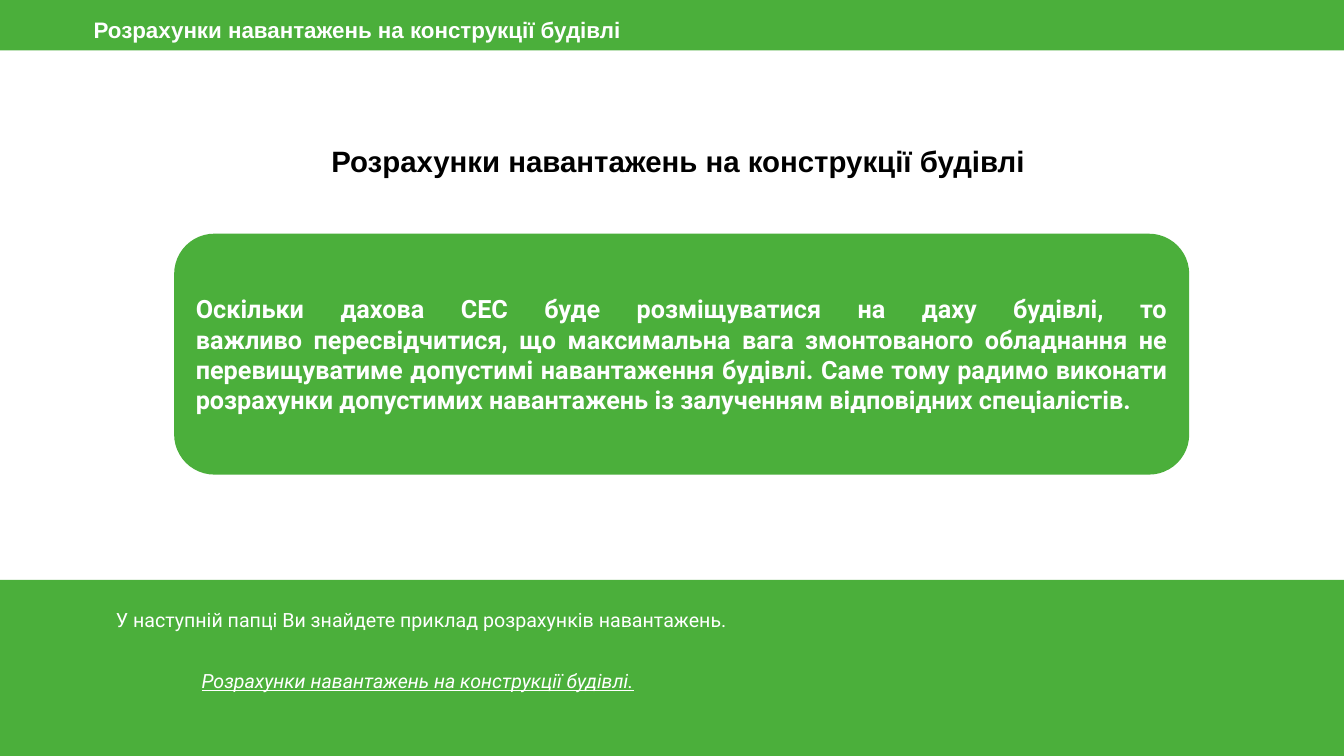
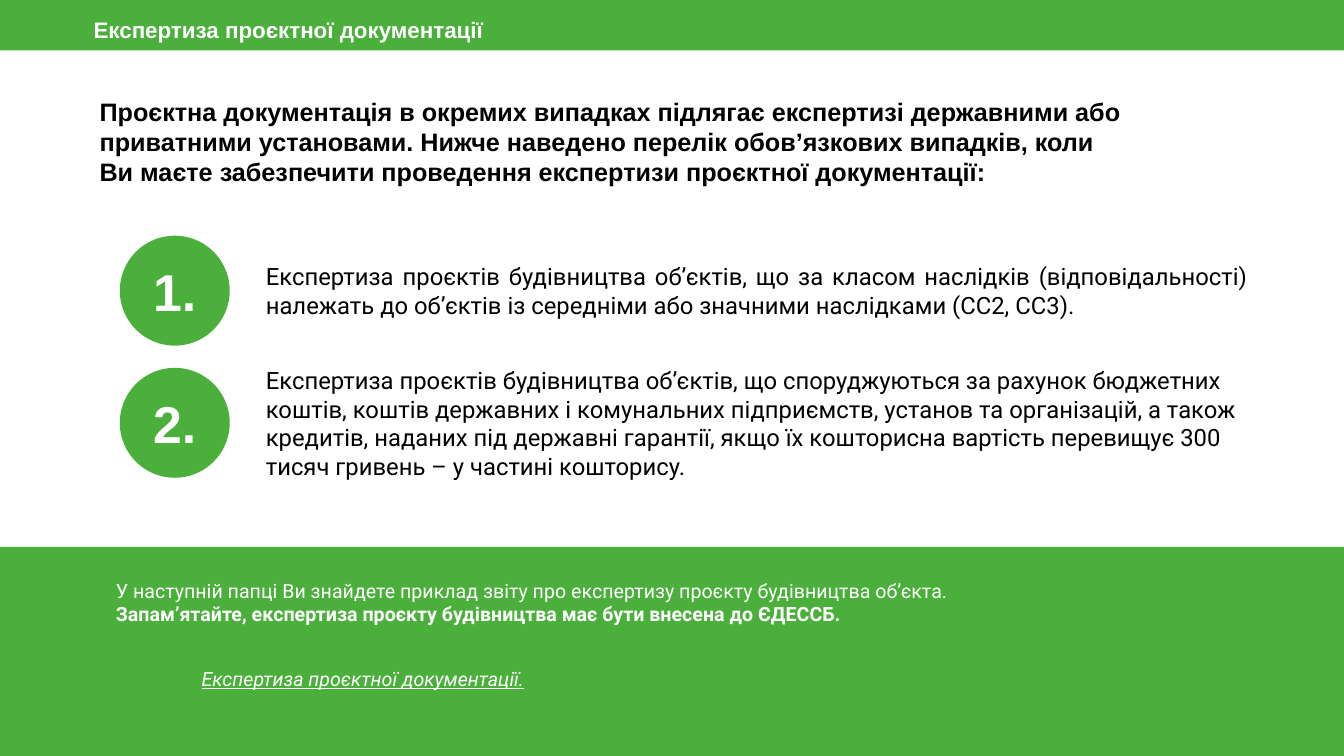
from dataclasses import dataclass, replace

from pptx import Presentation
from pptx.dml.color import RGBColor
from pptx.enum.shapes import MSO_SHAPE
from pptx.enum.text import MSO_ANCHOR, PP_ALIGN
from pptx.util import Cm, Pt


@dataclass(frozen=True)
class TextStyle:
    size: float
    font: str
    color: RGBColor
    bold: bool = False
    italic: bool = False
    underline: bool = False
    line_spacing: float = 1.0


class Theme:
    green = RGBColor(0x4B, 0xAF, 0x3B)
    white = RGBColor(0xFF, 0xFF, 0xFF)
    black = RGBColor(0x00, 0x00, 0x00)

    header = TextStyle(16, "Arial", white, bold=True)
    title = TextStyle(21, "Arial", black, bold=True, line_spacing=0.99)
    lead = replace(title, size=18)
    number = TextStyle(37, "Arial", white, bold=True)
    card = TextStyle(18, "Roboto", white, bold=True)
    item = TextStyle(17, "Roboto", black)
    note = TextStyle(14, "Roboto", white)
    note_strong = replace(note, bold=True)
    link = replace(note, italic=True, underline=True)


SLIDE_WIDTH, SLIDE_HEIGHT = Cm(33.87), Cm(19.05)
INSET = Cm(0.25)
NOTE_LEFT, LINK_LEFT = Cm(2.67), Cm(4.83)
NOTE_WIDTH, NOTE_HEIGHT = Cm(29.03), Cm(1.9)
CIRCLE_LEFT, CIRCLE_SIZE = Cm(3.02), Cm(2.77)
ITEM_LEFT, ITEM_WIDTH = Cm(6.45), Cm(25.25)
ITEMS_TOP, ITEM_PITCH = Cm(5.94), Cm(3.33)


def write_text(shape, lines, anchor=MSO_ANCHOR.TOP, align=PP_ALIGN.LEFT):
    """Fill the shape with one paragraph for each (text, style) pair."""
    frame = shape.text_frame
    frame.word_wrap = True
    frame.vertical_anchor = anchor
    frame.margin_left = frame.margin_right = INSET
    frame.margin_top = frame.margin_bottom = INSET
    for index, (text, style) in enumerate(lines):
        paragraph = frame.add_paragraph() if index else frame.paragraphs[0]
        paragraph.text = text
        paragraph.alignment = align
        paragraph.line_spacing = style.line_spacing
        font = paragraph.font
        font.size = Pt(style.size)
        font.name = style.font
        font.color.rgb = style.color
        font.bold = style.bold
        font.italic = style.italic
        font.underline = style.underline


def add_text(slide, box, lines, anchor=MSO_ANCHOR.TOP, align=PP_ALIGN.LEFT):
    write_text(slide.shapes.add_textbox(*box), lines, anchor, align)


def add_green_shape(slide, kind, box):
    shape = slide.shapes.add_shape(kind, *box)
    shape.shadow.inherit = False
    shape.fill.solid()
    shape.fill.fore_color.rgb = Theme.green
    shape.line.fill.background()
    return shape


def add_header(slide, text):
    add_green_shape(slide, MSO_SHAPE.RECTANGLE, (0, 0, SLIDE_WIDTH, Cm(1.27)))
    add_text(slide, (Cm(2.11), Cm(0.15), Cm(27.43), Cm(1.3)),
             [(text, Theme.header)])


def add_title(slide, left, top, text, style, align=PP_ALIGN.LEFT):
    add_text(slide, (left, top, Cm(31), Cm(2.6)), [(text, style)],
             MSO_ANCHOR.MIDDLE, align)


def add_footer(slide, top, note_top, notes, link_top, link):
    """Add the green band that runs to the slide's foot, with notes and a link."""
    add_green_shape(slide, MSO_SHAPE.RECTANGLE,
                    (0, top, SLIDE_WIDTH, SLIDE_HEIGHT - top))
    add_text(slide, (NOTE_LEFT, note_top, NOTE_WIDTH, NOTE_HEIGHT), notes)
    add_text(slide, (LINK_LEFT, link_top, NOTE_WIDTH, NOTE_HEIGHT),
             [(link, Theme.link)])


def add_card(slide, box, text):
    card = add_green_shape(slide, MSO_SHAPE.ROUNDED_RECTANGLE, box)
    write_text(card, [(text, Theme.card)], MSO_ANCHOR.MIDDLE, PP_ALIGN.JUSTIFY)


def add_numbered_items(slide, items):
    for index, (text, align) in enumerate(items):
        top = ITEMS_TOP + index * ITEM_PITCH
        circle = add_green_shape(slide, MSO_SHAPE.OVAL,
                                 (CIRCLE_LEFT, top, CIRCLE_SIZE, CIRCLE_SIZE))
        write_text(circle, [(f"{index + 1}.", Theme.number)],
                   MSO_ANCHOR.MIDDLE, PP_ALIGN.CENTER)
        add_text(slide, (ITEM_LEFT, top, ITEM_WIDTH, CIRCLE_SIZE),
                 [(text, Theme.item)], MSO_ANCHOR.MIDDLE, align)


def add_blank_slide(presentation):
    return presentation.slides.add_slide(presentation.slide_layouts[6])


def build_loads_slide(presentation):
    slide = add_blank_slide(presentation)
    topic = "Розрахунки навантажень на конструкції будівлі"
    add_header(slide, topic)
    add_title(slide, Cm(1.59), Cm(2.78), topic, Theme.title, PP_ALIGN.CENTER)
    add_card(
        slide, (Cm(4.39), Cm(5.89), Cm(25.58), Cm(6.07)),
        "Оскільки дахова СЕС буде розміщуватися на даху будівлі, то\n"
        "важливо пересвідчитися, що максимальна вага змонтованого обладнання "
        "не перевищуватиме допустимі навантаження будівлі. Саме тому радимо "
        "виконати розрахунки допустимих навантажень із залученням "
        "відповідних спеціалістів.")
    add_footer(
        slide, Cm(14.61), Cm(15.06),
        [("У наступній папці Ви знайдете приклад розрахунків навантажень.",
          Theme.note)],
        Cm(16.61), f"{topic}.")


def build_review_slide(presentation):
    slide = add_blank_slide(presentation)
    topic = "Експертиза проєктної документації"
    add_header(slide, topic)
    add_title(
        slide, Cm(2.26), Cm(2.29),
        "Проєктна документація в окремих випадках підлягає експертизі "
        "державними або\n"
        "приватними установами. Нижче наведено перелік обов’язкових "
        "випадків, коли\n"
        "Ви маєте забезпечити проведення експертизи проєктної документації:",
        Theme.lead)
    add_numbered_items(slide, [
        ("Експертиза проєктів будівництва об’єктів, що за класом наслідків "
         "(відповідальності) належать до об’єктів із середніми або значними "
         "наслідками (СС2, СС3).", PP_ALIGN.JUSTIFY),
        ("Експертиза проєктів будівництва об’єктів, що споруджуються за "
         "рахунок бюджетних коштів, коштів державних і комунальних "
         "підприємств, установ та організацій, а також кредитів, наданих під "
         "державні гарантії, якщо їх кошторисна вартість перевищує 300 тисяч "
         "гривень – у частині кошторису.", PP_ALIGN.LEFT),
    ])
    add_footer(
        slide, Cm(13.78), Cm(14.33),
        [("У наступній папці Ви знайдете приклад звіту про експертизу проєкту "
          "будівництва об’єкта.", Theme.note),
         ("Запам’ятайте, експертиза проєкту будівництва має бути внесена до "
          "ЄДЕССБ.", Theme.note_strong)],
        Cm(16.56), f"{topic}.")


def main():
    presentation = Presentation()
    presentation.slide_width = SLIDE_WIDTH
    presentation.slide_height = SLIDE_HEIGHT
    build_loads_slide(presentation)
    build_review_slide(presentation)
    presentation.save("out.pptx")


if __name__ == "__main__":
    main()
